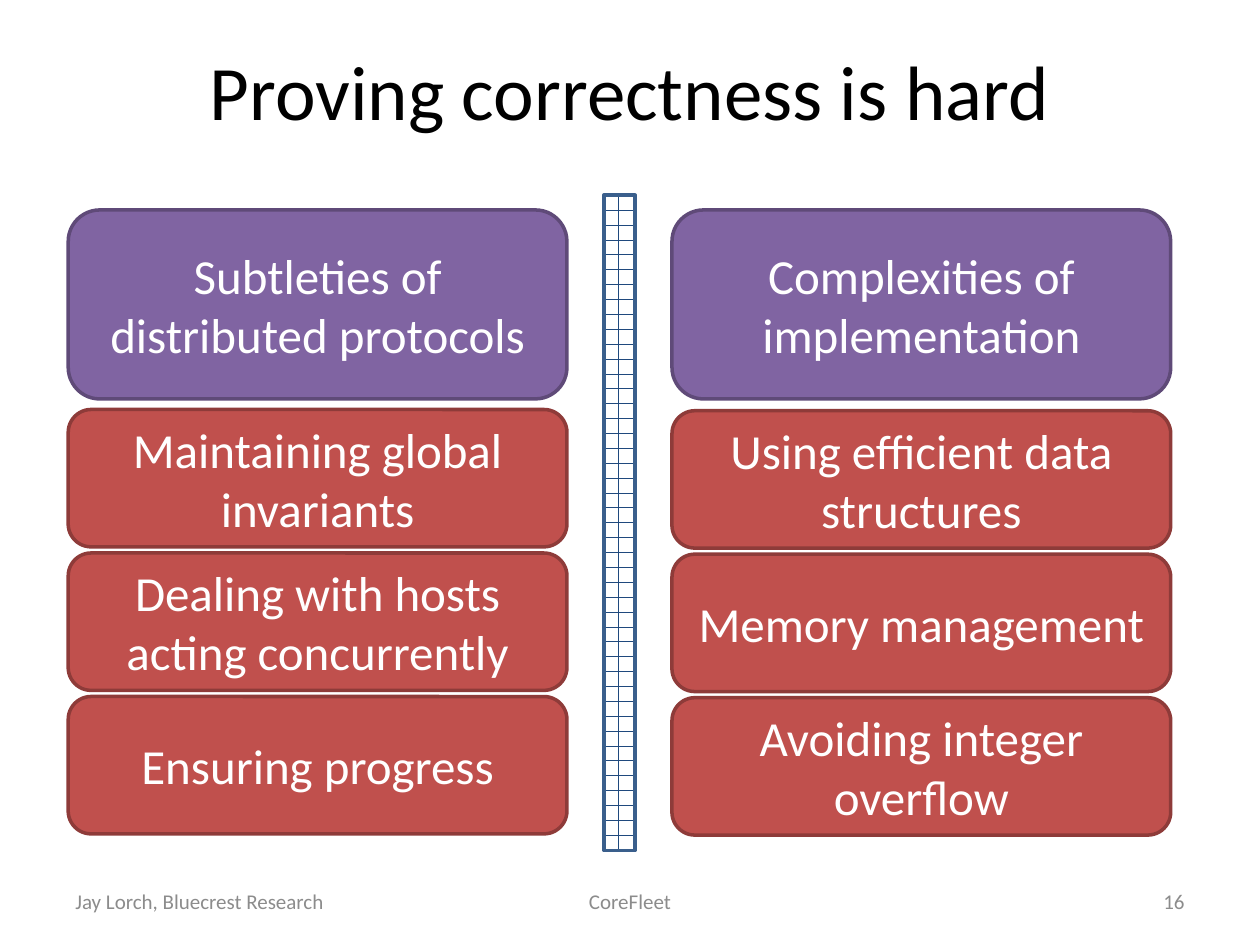
from pptx import Presentation
from pptx.dml.color import RGBColor
from pptx.enum.dml import MSO_PATTERN as Pattern
from pptx.enum.shapes import MSO_SHAPE as Shape
from pptx.enum.text import MSO_ANCHOR as Anchor, PP_ALIGN as Align
from pptx.util import Pt


def color(value):
    return RGBColor.from_string(value)


class SlideBuilder:
    """Holds the style and the current slide, and adds its elements."""

    font = "Calibri"
    topic = ("8064A2", "5F4A78")
    challenge = ("C0504D", "8E3B39")
    line_width = 2

    def __init__(self, slide):
        self.slide = slide

    def set_text(self, shape, text, size, ink, align):
        frame = shape.text_frame
        frame.word_wrap = True
        frame.vertical_anchor = Anchor.MIDDLE
        paragraph = frame.paragraphs[0]
        paragraph.alignment = align
        run = paragraph.add_run()
        run.text = text
        run.font.name = self.font
        run.font.size = Pt(size)
        run.font.color.rgb = color(ink)

    def label(self, box, text, size, ink, align=Align.CENTER):
        shape = self.slide.shapes.add_textbox(*map(Pt, box))
        self.set_text(shape, text, size, ink, align)

    def outlined(self, kind, box, line):
        shape = self.slide.shapes.add_shape(kind, *map(Pt, box))
        shape.shadow.inherit = False
        shape.line.color.rgb = color(line)
        shape.line.width = Pt(self.line_width)
        return shape

    def card(self, box, text, colors):
        fill, line = colors
        shape = self.outlined(Shape.ROUNDED_RECTANGLE, box, line)
        shape.fill.solid()
        shape.fill.fore_color.rgb = color(fill)
        self.set_text(shape, text, 28, "FFFFFF", Align.CENTER)

    def wall(self, box):
        shape = self.outlined(Shape.RECTANGLE, box, "3A5F8C")
        shape.fill.patterned()
        shape.fill.pattern = Pattern.HORIZONTAL_BRICK
        shape.fill.fore_color.rgb = color("1F497D")
        shape.fill.back_color.rgb = color("FFFFFF")


COLUMNS = [
    (39, 234, "Subtleties of distributed protocols",
     ["Maintaining global invariants",
      "Dealing with hosts acting concurrently",
      "Ensuring progress"]),
    (384, 234.7, "Complexities of implementation",
     ["Using efficient data structures",
      "Memory management",
      "Avoiding integer overflow"]),
]
FOOTERS = [
    (36, 168, "Jay Lorch, Bluecrest Research", Align.LEFT),
    (246, 228, "CoreFleet", Align.CENTER),
    (516, 168, "16", Align.RIGHT),
]
CARD_WIDTH = 285
CHALLENGE_HEIGHT = 78.5
CHALLENGE_PITCH = 82


def main():
    presentation = Presentation()
    presentation.slide_width = Pt(720)
    presentation.slide_height = Pt(540)
    builder = SlideBuilder(presentation.slides.add_slide(presentation.slide_layouts[6]))

    builder.label((21, 6, 678, 90), "Proving correctness is hard", 44, "000000")
    for left, width, text, align in FOOTERS:
        builder.label((left, 500.5, width, 28.75), text, 12, "8C8C8C", align)

    for left, first_top, topic, challenges in COLUMNS:
        builder.card((left, 120, CARD_WIDTH, 108), topic, builder.topic)
        for index, challenge in enumerate(challenges):
            top = first_top + index * CHALLENGE_PITCH
            builder.card((left, top, CARD_WIDTH, CHALLENGE_HEIGHT), challenge, builder.challenge)

    builder.wall((345, 111.6, 18, 374.4))
    presentation.save("out.pptx")


if __name__ == "__main__":
    main()
